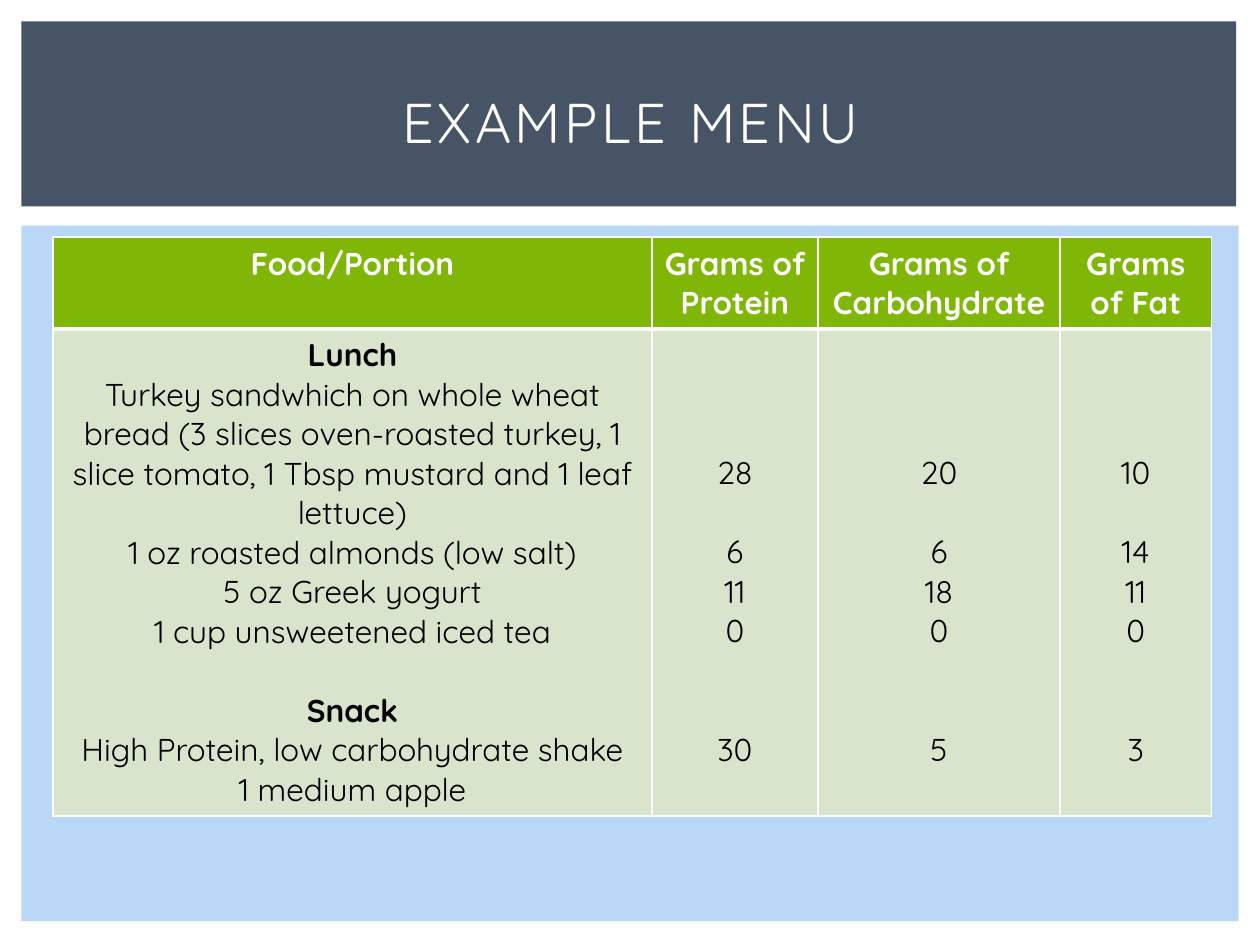
import dataclasses

import pptx
import pptx.dml.color
import pptx.enum.shapes
import pptx.enum.text
import pptx.oxml
import pptx.oxml.ns
import pptx.util

Cm = pptx.util.Cm
Pt = pptx.util.Pt
CENTER = pptx.enum.text.PP_ALIGN.CENTER


@dataclasses.dataclass
class Theme:
    font: str = "Quicksand"
    title_size: int = 32
    body_size: int = 18
    line_height: float = 22.5
    white: str = "FFFFFF"
    black: str = "000000"
    banner: str = "465466"
    backdrop: str = "BBD7F8"
    header: str = "80B606"
    body: str = "D8E5CC"


class MenuSlide:
    """Holds the theme and the current slide."""

    def __init__(self, page, theme):
        self.page = page
        self.theme = theme

    def color(self, value):
        return pptx.dml.color.RGBColor.from_string(value)

    def add_text(self, para, text, color, size, bold=False):
        para.alignment = CENTER
        span = para.add_run()
        span.text = text
        formats = {"name": self.theme.font, "size": Pt(size), "bold": bold}
        for name, value in formats.items():
            setattr(span.font, name, value)
        span.font.color.rgb = self.color(color)
        return span

    def panel(self, left, top, width, height, color):
        box = self.page.shapes.add_shape(
            pptx.enum.shapes.MSO_SHAPE.RECTANGLE,
            Cm(left), Cm(top), Cm(width), Cm(height))
        box.shadow.inherit = False
        box.fill.solid()
        box.fill.fore_color.rgb = self.color(color)
        box.line.fill.background()

    def title(self, text, left, top, width, height):
        box = self.page.shapes.title
        place = {"left": left, "top": top, "width": width, "height": height}
        for name, value in place.items():
            setattr(box, name, Cm(value))
        frame = box.text_frame
        frame.auto_size = pptx.enum.text.MSO_AUTO_SIZE.NONE
        frame.vertical_anchor = pptx.enum.text.MSO_ANCHOR.MIDDLE
        span = self.add_text(frame.paragraphs[0], text, self.theme.white,
                             self.theme.title_size)
        span.font._element.set("spc", "200")
        # Bring the title in front of the panels
        self.page.shapes._spTree.append(box._element)

    def table(self, left, top, widths, heights):
        frame = self.page.shapes.add_table(
            len(heights), len(widths), Cm(left), Cm(top),
            Cm(sum(widths)), Cm(sum(heights)))
        grid = frame.table
        for column, width in zip(grid.columns, widths):
            column.width = Cm(width)
        for row, height in zip(grid.rows, heights):
            row.height = Cm(height)
        return grid

    def cell(self, cell, fill, borders):
        properties = cell._tc.get_or_add_tcPr()
        for side, points in borders.items():
            properties.append(pptx.oxml.parse_xml(
                f'<a:ln{side} {pptx.oxml.ns.nsdecls("a")} w="{Pt(points)}">'
                f'<a:solidFill><a:srgbClr val="{self.theme.white}"/>'
                f'</a:solidFill></a:ln{side}>'))
        cell.fill.solid()
        cell.fill.fore_color.rgb = self.color(fill)

    def lines(self, cell, entries, color):
        """Entries are (text, bold, number of lines left free above)."""
        frame = cell.text_frame
        for index, (text, bold, gap) in enumerate(entries):
            para = frame.add_paragraph() if index else frame.paragraphs[0]
            space = Pt(gap * self.theme.line_height)
            if index:
                para.space_before = space
            else:
                cell.margin_top = Cm(0.13) + space
            self.add_text(para, text, color, self.theme.body_size, bold)


HEADINGS = ["Food/Portion", "Grams of Protein", "Grams of Carbohydrate",
            "Grams of Fat"]
FOODS = [
    ("Lunch", True, 0),
    ("Turkey sandwhich on whole wheat bread (3 slices oven-roasted turkey, "
     "1 slice tomato, 1 Tbsp mustard and 1 leaf lettuce)", False, 0),
    ("1 oz roasted almonds (low salt)", False, 0),
    ("5 oz Greek yogurt", False, 0),
    ("1 cup unsweetened iced tea", False, 0),
    ("Snack", True, 1),
    ("High Protein, low carbohydrate shake", False, 0),
    ("1 medium apple", False, 0),
]
# Grams per food, and the free lines that align them with the foods
GRAMS = [[28, 6, 11, 0, 30], [20, 6, 18, 0, 5], [10, 14, 11, 0, 3]]
GAPS = [3, 1, 0, 0, 2]


def main():
    theme = Theme()
    deck = pptx.Presentation()
    deck.slide_width, deck.slide_height = Cm(25.4), Cm(19.05)
    menu = MenuSlide(deck.slides.add_slide(deck.slide_layouts[5]), theme)

    # Background panels and title
    menu.panel(0.43, 4.55, 24.54, 14.02, theme.backdrop)
    menu.panel(0.43, 0.43, 24.49, 3.73, theme.banner)
    menu.title("EXAMPLE MENU", 1.07, 0.99, 23.29, 2.92)

    # Menu table
    grid = menu.table(1.07, 4.78, [12.07, 3.35, 4.88, 3.05], [1.82, 9.82])
    bodies = [FOODS] + [
        [(str(value), False, gap) for value, gap in zip(column, GAPS)]
        for column in GRAMS]
    for index, (heading, entries) in enumerate(zip(HEADINGS, bodies)):
        top, bottom = grid.cell(0, index), grid.cell(1, index)
        menu.cell(top, theme.header, {"L": 1, "R": 1, "T": 1, "B": 3})
        menu.lines(top, [(heading, True, 0)], theme.white)
        menu.cell(bottom, theme.body, {"L": 1, "R": 1, "T": 3, "B": 1})
        menu.lines(bottom, entries, theme.black)

    deck.save("out.pptx")


if __name__ == "__main__":
    main()
